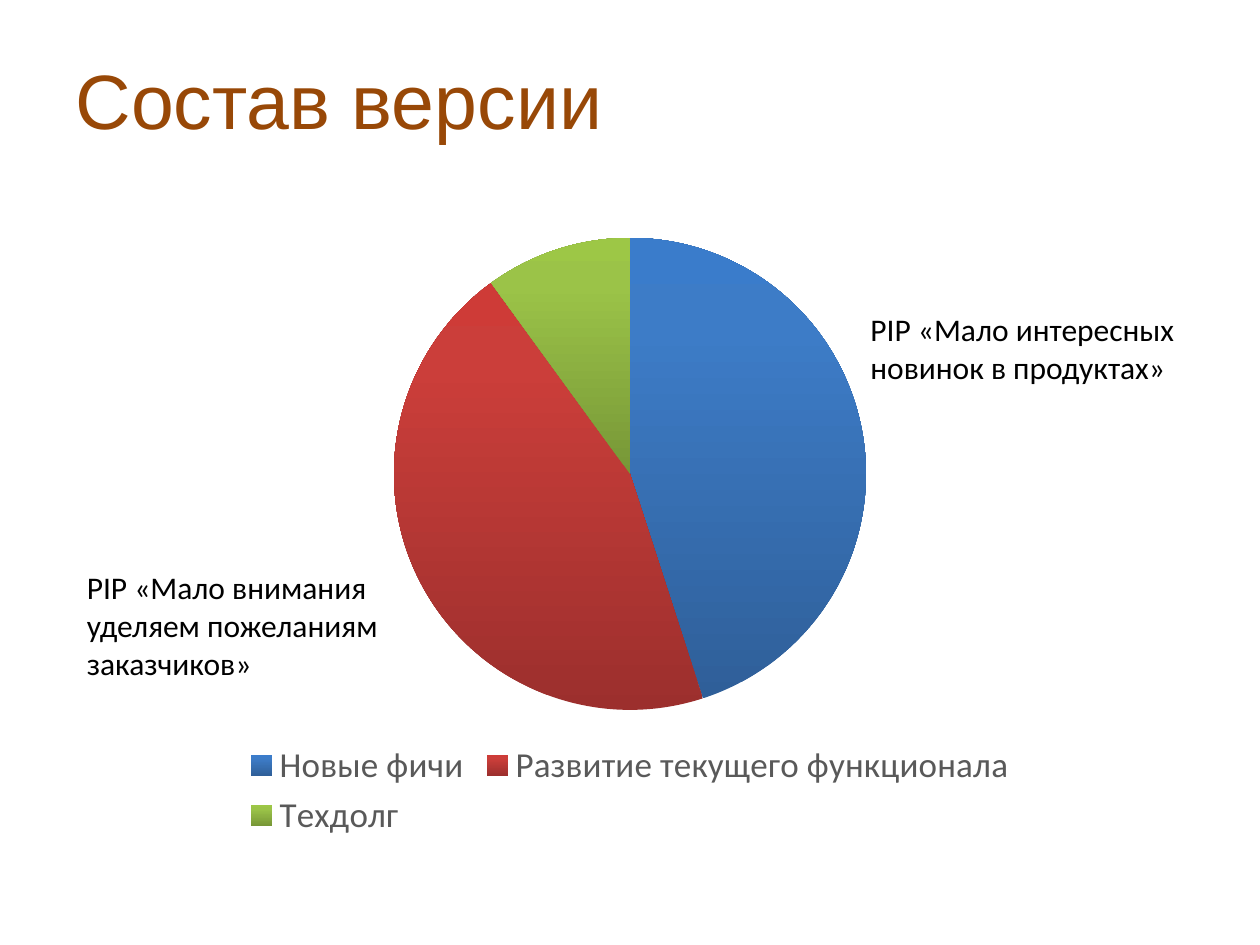
import copy

import pptx
import pptx.chart.data
import pptx.dml.color
import pptx.enum.chart
import pptx.enum.text
import pptx.oxml.ns
import pptx.util

Inches = pptx.util.Inches
Pt = pptx.util.Pt
RGBColor = pptx.dml.color.RGBColor

BROWN = RGBColor(0x98, 0x48, 0x07)
BLACK = RGBColor(0, 0, 0)
GRAY = RGBColor(0x59, 0x59, 0x59)
BLUES = RGBColor(0x2F, 0x5F, 0x99), RGBColor(0x3D, 0x7C, 0xC7), RGBColor(0x3A, 0x7C, 0xCB)
REDS = RGBColor(0x9C, 0x2F, 0x2D), RGBColor(0xCB, 0x3E, 0x3A), RGBColor(0xCE, 0x3B, 0x37)
GREENS = RGBColor(0x77, 0x97, 0x37), RGBColor(0x9B, 0xC3, 0x48), RGBColor(0x9D, 0xC7, 0x46)


def set_font(font, name, size, color):
    font.name, font.size = name, Pt(size)
    font.color.rgb = color


prs = pptx.Presentation()
prs.slide_width, prs.slide_height = Inches(10), Inches(7.5)
s = prs.slides.add_slide(prs.slide_layouts[5])

# Title
title = s.shapes.title
title.left, title.top, title.width, title.height = map(Inches, (0.5, 0.3, 9, 1.25))
tf = title.text_frame
tf.text = "Состав версии"
tf.vertical_anchor = pptx.enum.text.MSO_ANCHOR.TOP
tf.margin_top = Inches(0.12)
p = tf.paragraphs[0]
p.alignment = pptx.enum.text.PP_ALIGN.LEFT
set_font(p.runs[0].font, "Arial", 44, BROWN)

# Pie chart of the release contents
data = pptx.chart.data.CategoryChartData()
data.categories = ["Новые фичи", "Развитие текущего функционала", "Техдолг"]
data.add_series("Series 1", (45, 45, 10))
chart = s.shapes.add_chart(pptx.enum.chart.XL_CHART_TYPE.PIE, Inches(0.5), Inches(1.75),
                           Inches(9), Inches(4.95), data).chart
set_font(chart.font, "Calibri", 10, BLACK)
chart.has_title = False
chart.has_legend = True
chart.legend.position = pptx.enum.chart.XL_LEGEND_POSITION.BOTTOM
chart.legend.include_in_layout = False
set_font(chart.legend.font, "Calibri", 20, GRAY)

# Slice gradients, dark at the bottom
plot = chart.plots[0]
plot.vary_by_categories = True
points = plot.series[0].points
for i in range(3):
    fill = points[i].format.fill
    fill.gradient()
    fill.gradient_angle = 90
for stops in chart._chartSpace.iter(pptx.oxml.ns.qn("a:gsLst")):
    stops.append(copy.deepcopy(stops[-1]))
for i, colors in enumerate((BLUES, REDS, GREENS)):
    stops = points[i].format.fill.gradient_stops
    for stop, position, color in zip(stops, (0, 0.8, 1), colors):
        stop.position = position
        stop.color.rgb = color

# Notes beside the slices
for left, top, width, height, lines in (
    (0.59, 4.46, 2.99, 1.01, "PIP «Мало внимания уделяем пожеланиям заказчиков»"),
    (6.81, 2.41, 5, 0.71, "PIP «Мало интересных\nновинок в продуктах»"),
):
    tf = s.shapes.add_textbox(*map(Inches, (left, top, width, height))).text_frame
    tf.word_wrap = True
    tf.auto_size = pptx.enum.text.MSO_AUTO_SIZE.SHAPE_TO_FIT_TEXT
    tf.text = lines
    for p in tf.paragraphs:
        set_font(p.runs[0].font, "Calibri", 18, BLACK)

prs.save("out.pptx")
